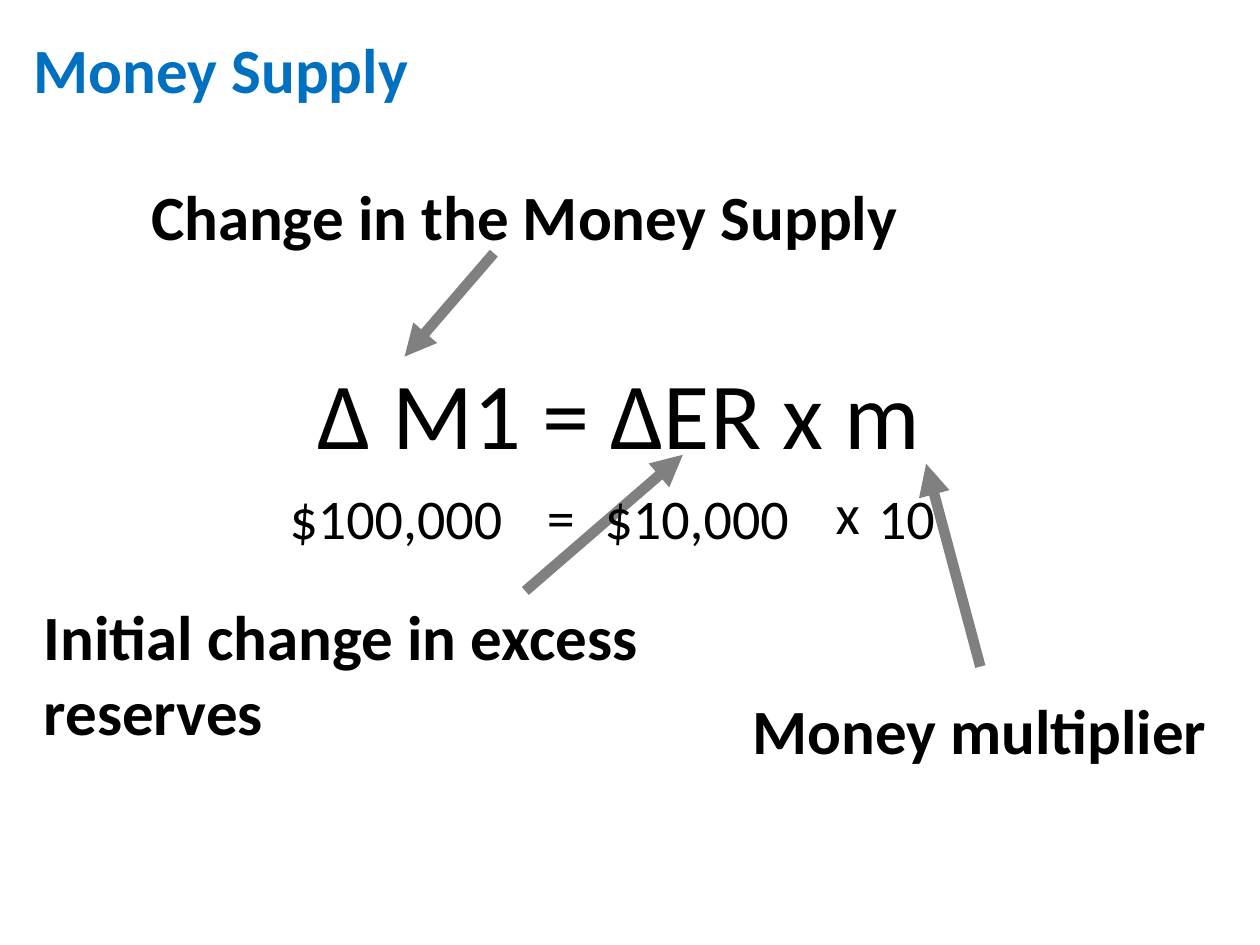
from dataclasses import dataclass

from lxml import etree
from pptx import Presentation
from pptx import util as u
from pptx.dml.color import RGBColor
from pptx.enum import shapes, text
from pptx.oxml import ns

Pt = u.Pt


@dataclass(frozen=True)
class Theme:
    font: str = "Calibri"
    title: RGBColor = RGBColor(0x00, 0x70, 0xC0)
    ink: RGBColor = RGBColor(0x00, 0x00, 0x00)
    arrow: RGBColor = RGBColor(0x80, 0x80, 0x80)
    equation_size: int = 54
    heading_size: int = 36
    figure_size: int = 32
    arrow_width: int = 6


THEME = Theme()
LEFT, CENTER = text.PP_ALIGN.LEFT, text.PP_ALIGN.CENTER


def add_text(page, box, words, size, color=THEME.ink, bold=False, wrap=True, **layout):
    frame = page.shapes.add_textbox(*map(Pt, box)).text_frame
    frame.word_wrap = wrap
    para = frame.paragraphs[0]
    for name, value in {"alignment": LEFT, **layout}.items():
        setattr(para, name, value)
    span = para.add_run()
    span.text = words
    span.font.color.rgb = color
    for name, value in {"name": THEME.font, "size": Pt(size), "bold": bold}.items():
        setattr(span.font, name, value)


def add_arrow(page, start, end):
    arrow = page.shapes.add_connector(
        shapes.MSO_CONNECTOR.STRAIGHT, *map(Pt, (*start, *end)))
    arrow.line.color.rgb = THEME.arrow
    arrow.line.width = Pt(THEME.arrow_width)
    etree.SubElement(arrow.line._get_or_add_ln(), ns.qn("a:tailEnd"), type="triangle")
    etree.SubElement(arrow._element.spPr, ns.qn("a:effectLst"))


def add_title(page, box):
    add_text(page, box, "Money Supply", THEME.heading_size, THEME.title, bold=True)


def add_equation(page, box):
    add_text(page, box, "Δ M1 = ΔER x m ", THEME.equation_size,
             alignment=CENTER, line_spacing=0.8, space_before=Pt(2))


def add_callout(page, box, words, start, end, align=LEFT):
    """A bold label and its arrow; start and end are offsets from the box corner."""
    left, top = box[:2]
    add_text(page, box, words, THEME.heading_size, bold=True, alignment=align)
    add_arrow(page, *((left + x, top + y) for x, y in (start, end)))


def add_example(page, box):
    """The worked figures, each at its offset from the box corner."""
    left, top, _, height = box
    terms = [
        ("$100,000", 0, 0, 162, True),
        ("=", 147, -0.7, 33, False),
        ("$10,000", 180, 0, 144, True),
        ("x", 312, -2.9, 31, False),
        ("10", 336.3, 0, 72, True),
    ]
    for words, x, y, width, wrap in terms:
        add_text(page, (left + x, top + y, width, height), words,
                 THEME.figure_size, wrap=wrap)


def main():
    deck = Presentation()
    deck.slide_width, deck.slide_height = Pt(720), Pt(540)
    page = deck.slides.add_slide(deck.slide_layouts[6])

    # Title and equation
    add_equation(page, (54, 211.7, 612, 60))
    add_title(page, (12.2, 13.7, 516, 47))

    # Meaning of each term
    add_callout(page, (79.2, 97.9, 516, 47), "Change in the Money Supply",
                (203, 46.8), (152, 105.9))
    add_callout(page, (18, 337.7, 390, 86), "Initial change in excess reserves",
                (282.2, 0), (372.2, -77.8))
    add_callout(page, (396, 391.7, 327.6, 46), "Money multiplier",
                (164.2, -10.8), (133.2, -126.7), CENTER)

    # Worked example
    add_example(page, (158.4, 272.9, 408.3, 42.5))

    deck.save("out.pptx")


if __name__ == "__main__":
    main()
